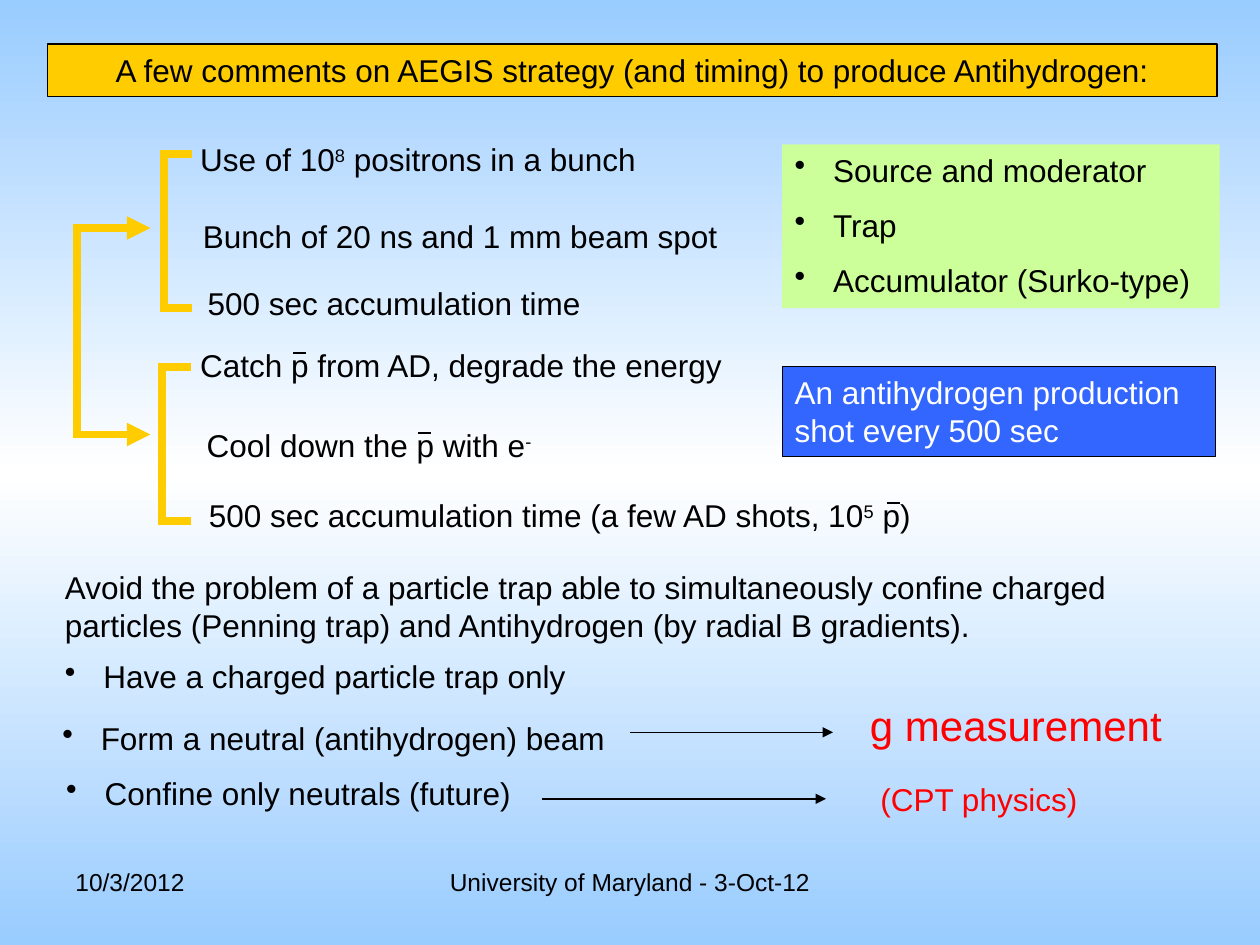
from copy import deepcopy
from dataclasses import dataclass

from lxml.etree import SubElement
from pptx import Presentation
from pptx.dml.color import RGBColor
from pptx.enum.shapes import MSO_CONNECTOR, MSO_SHAPE
from pptx.enum.text import MSO_ANCHOR, MSO_AUTO_SIZE, PP_ALIGN
from pptx.oxml.ns import qn
from pptx.util import Pt


@dataclass(frozen=True)
class Theme:
    font: str = "Arial"
    body: int = 18
    large: int = 24
    footer: int = 14
    paragraph_gap: int = 10
    bullet_indent: int = 22
    thin: float = 0.75
    bar: float = 1
    thick: float = 4.5
    black: RGBColor = RGBColor(0x00, 0x00, 0x00)
    white: RGBColor = RGBColor(0xFF, 0xFF, 0xFF)
    red: RGBColor = RGBColor(0xFF, 0x00, 0x00)
    gold: RGBColor = RGBColor(0xFF, 0xCC, 0x00)
    green: RGBColor = RGBColor(0xCC, 0xFF, 0x99)
    blue: RGBColor = RGBColor(0x33, 0x66, 0xFF)
    sky: RGBColor = RGBColor(0x99, 0xCC, 0xFF)


THEME = Theme()


def apply_format(target, values):
    for name, value in values.items():
        setattr(target, name, value)


def add_bullet(paragraph):
    properties = paragraph._p.get_or_add_pPr()
    properties.set("marL", str(Pt(THEME.bullet_indent)))
    properties.set("indent", str(-Pt(THEME.bullet_indent)))
    SubElement(properties, qn("a:buChar")).set("char", "•")


def write_text(shape, lines, size=THEME.body, color=THEME.black,
               align=PP_ALIGN.LEFT, anchor=MSO_ANCHOR.TOP, bullets=False):
    frame = shape.text_frame
    apply_format(frame, {
        "word_wrap": True, "auto_size": MSO_AUTO_SIZE.NONE, "vertical_anchor": anchor,
        "margin_left": Pt(7.2), "margin_right": Pt(7.2),
        "margin_top": Pt(3.6), "margin_bottom": Pt(3.6),
    })
    for index, line in enumerate(lines):
        paragraph = frame.add_paragraph() if index else frame.paragraphs[0]
        gap = Pt(THEME.paragraph_gap if index else 0)
        apply_format(paragraph, {"alignment": align, "space_before": gap})
        if bullets:
            add_bullet(paragraph)
        for position, piece in enumerate(line.split("^")):
            if not piece:
                continue
            run = paragraph.add_run()
            run.text = piece
            apply_format(run.font, {"name": THEME.font, "size": Pt(size), "bold": False})
            run.font.color.rgb = color
            if position % 2:
                run._r.get_or_add_rPr().set("baseline", "30000")


def add_text(slide, box, line, **style):
    shape = slide.shapes.add_textbox(*map(Pt, box))
    write_text(shape, [line], **style)


def paint(shape, fill, outlined):
    shape.fill.solid()
    shape.fill.fore_color.rgb = fill
    if outlined:
        shape.line.color.rgb = THEME.black
        shape.line.width = Pt(THEME.thin)
    else:
        shape.line.fill.background()


def add_panel(slide, box, lines, fill, outlined=False, **style):
    panel = slide.shapes.add_shape(MSO_SHAPE.RECTANGLE, *map(Pt, box))
    panel.shadow.inherit = False
    paint(panel, fill, outlined)
    write_text(panel, lines, **style)


def add_line(slide, start, end, color=THEME.black, width=THEME.thin, arrow=False):
    line = slide.shapes.add_connector(MSO_CONNECTOR.STRAIGHT, *map(Pt, (*start, *end)))
    line.line.color.rgb = color
    line.line.width = Pt(width)
    if arrow:
        SubElement(line.line._get_or_add_ln(), qn("a:tailEnd")).set("type", "triangle")
    SubElement(line._element.spPr, qn("a:effectLst"))


def set_background(slide):
    fill = slide.background.fill
    fill.gradient()
    fill.gradient_angle = 90
    first = fill.gradient_stops[0]._gs
    first.addnext(deepcopy(first))
    colors = (THEME.sky, THEME.white, THEME.sky)
    for stop, color, position in zip(fill.gradient_stops, colors, (0, 0.5, 1)):
        stop.color.rgb = color
        stop.position = position


def place_title(slide, box, text):
    title = slide.shapes.title
    apply_format(title, dict(zip(("left", "top", "width", "height"), map(Pt, box))))
    paint(title, THEME.gold, True)
    write_text(title, [text], align=PP_ALIGN.CENTER, anchor=MSO_ANCHOR.MIDDLE)


def draw_bracket(slide, box, arrows=False):
    left, top, width, height = box
    spine = left + THEME.thick / 2
    style = {"color": THEME.gold, "width": THEME.thick}
    add_line(slide, (spine, top), (spine, top + height), **style)
    for level in (top, top + height):
        add_line(slide, (left, level), (left + width, level), arrow=arrows, **style)


def place_steps(slide, box, steps):
    left, top, width, _ = box
    for indent, drop, text, bar in steps:
        add_text(slide, (left + indent, top + drop, width - indent, 29), text)
        if bar:
            start, level = left + bar, top + drop + 7.5
            add_line(slide, (start, level), (start + 7.5, level), width=THEME.bar)


def place_conclusions(slide, box):
    left, top, width, _ = box
    add_text(slide, (left, top, width, 50),
             "Avoid the problem of a particle trap able to simultaneously confine charged "
             "particles (Penning trap) and Antihydrogen (by radial B gradients).")
    options = (
        (0, 51, "Have a charged particle trap only"),
        (-1.5, 86.5, "Form a neutral (antihydrogen) beam"),
        (0.75, 118, "Confine only neutrals (future)"),
    )
    for indent, drop, text in options:
        add_text(slide, (left + indent, top + drop, 400, 29), text, bullets=True)
    outcomes = (
        (330, 446, 97.5, 460, 75, "g measurement", THEME.large),
        (279.5, 442, 135.5, 466, 121, "(CPT physics)", THEME.body),
    )
    for start, end, level, indent, drop, text, size in outcomes:
        add_line(slide, (left + start, top + level), (left + end, top + level), arrow=True)
        add_text(slide, (left + indent, top + drop, width - indent, 36), text,
                 size=size, color=THEME.red)


def place_footer(slide, box):
    left, top, width, height = box
    add_text(slide, (left, top, 168, height), "10/3/2012", size=THEME.footer)
    add_text(slide, (left + 210, top, width - 420, height),
             "University of Maryland - 3-Oct-12", size=THEME.footer, align=PP_ALIGN.CENTER)


def main():
    presentation = Presentation()
    presentation.slide_width, presentation.slide_height = Pt(720), Pt(540)
    slide = presentation.slides.add_slide(presentation.slide_layouts[5])
    set_background(slide)
    place_title(slide, (27, 25.2, 668.5, 29.8),
                "A few comments on AEGIS strategy (and timing) to produce Antihydrogen:")
    draw_bracket(slide, (42, 130.3, 44, 118), arrows=True)
    draw_bracket(slide, (91.5, 88, 18.5, 88))
    draw_bracket(slide, (90.5, 209.5, 18.5, 88))
    place_steps(slide, (107.3, 76.5, 393, 111), (
        (0, 0, "Use of 10^8^ positrons in a bunch", None),
        (1.5, 43.7, "Bunch of 20 ns and 1 mm beam spot", None),
        (4.3, 82, "500 sec accumulation time", None),
    ))
    place_steps(slide, (107.3, 194.4, 478, 115), (
        (0, 0, "Catch p from AD, degrade the energy", 60.3),
        (3.7, 45.5, "Cool down the p with e^-^", 131.7),
        (5, 85.7, "500 sec accumulation time (a few AD shots, 10^5^ p)", 399.7),
    ))
    add_panel(slide, (447, 82.5, 250, 93.6),
              ("Source and moderator", "Trap", "Accumulator (Surko-type)"),
              THEME.green, bullets=True)
    add_panel(slide, (447, 209.5, 247.7, 51.5),
              ["An antihydrogen production shot every 500 sec"],
              THEME.blue, outlined=True, color=THEME.white)
    place_conclusions(slide, (30, 321, 647, 150))
    place_footer(slide, (36, 492, 648, 37))
    presentation.save("out.pptx")


if __name__ == "__main__":
    main()
